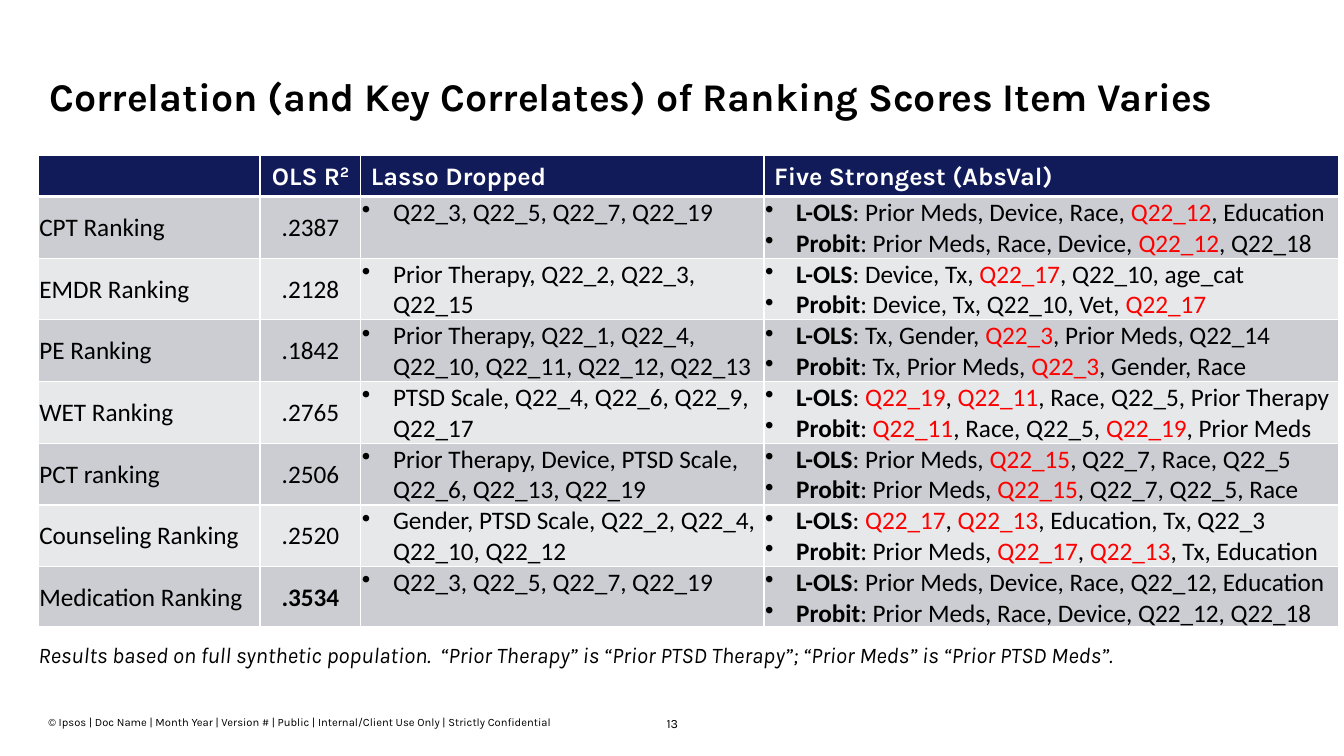
import pptx
import pptx.dml.color
import pptx.enum.text
import pptx.oxml
import pptx.oxml.ns
import pptx.util

BLACK = pptx.dml.color.RGBColor(0x00, 0x00, 0x00)
WHITE = pptx.dml.color.RGBColor(0xFF, 0xFF, 0xFF)
RED = pptx.dml.color.RGBColor(0xFF, 0x00, 0x00)
NAVY = pptx.dml.color.RGBColor(0x12, 0x1B, 0x5A)
BANDS = (pptx.dml.color.RGBColor(0xCC, 0xCD, 0xD2),
         pptx.dml.color.RGBColor(0xE7, 0xE8, 0xEA))

SLIDE_WIDTH = pptx.util.Inches(13.33)
SLIDE_HEIGHT = pptx.util.Inches(7.5)
Pt = pptx.util.Pt
ALIGN = pptx.enum.text.PP_ALIGN
ANCHOR = pptx.enum.text.MSO_ANCHOR
GROW = pptx.enum.text.MSO_AUTO_SIZE.SHAPE_TO_FIT_TEXT

# Shares of the slide's size, in percent
TABLE_LEFT, TABLE_TOP = 2.85, 20.53
COLUMN_SHARES = (16.5, 7.5, 30, 42.75)
HEADER_SHARE, RANKING_SHARE = 5.47, 8.16

HEADER_FONT = {"name": "Karla", "size": Pt(18), "bold": True}
BODY_FONT = {"name": "Calibri", "size": Pt(18), "bold": False}
NO_MARGINS = {"margin_left": 0, "margin_top": 0, "margin_right": 0, "margin_bottom": 0}
TIGHT_MARGINS = {side: pptx.util.Inches(0.01)
                 for side in ("margin_left", "margin_top", "margin_right")}
TIGHT_MARGINS["margin_bottom"] = 0

HEADINGS = ("", "OLS R", "Lasso Dropped", "Five Strongest (AbsVal)")

# Ranking, R squared, dropped by lasso, then L-OLS and Probit (*red*)
RANKINGS = (
    ("CPT Ranking", ".2387", "Q22_3, Q22_5, Q22_7, Q22_19",
     "Prior Meds, Device, Race, *Q22_12*, Education",
     "Prior Meds, Race, Device, *Q22_12*, Q22_18"),
    ("EMDR Ranking", ".2128", "Prior Therapy, Q22_2, Q22_3, Q22_15",
     "Device, Tx, *Q22_17*, Q22_10, age_cat",
     "Device, Tx, Q22_10, Vet, *Q22_17*"),
    ("PE Ranking", ".1842", "Prior Therapy, Q22_1, Q22_4, Q22_10, Q22_11, Q22_12, Q22_13",
     "Tx, Gender, *Q22_3*, Prior Meds, Q22_14",
     "Tx, Prior Meds, *Q22_3*, Gender, Race"),
    ("WET Ranking", ".2765", "PTSD Scale, Q22_4, Q22_6, Q22_9, Q22_17",
     "*Q22_19*, *Q22_11*, Race, Q22_5, Prior Therapy",
     "*Q22_11*, Race, Q22_5, *Q22_19*, Prior Meds"),
    ("PCT ranking", ".2506", "Prior Therapy, Device, PTSD Scale, Q22_6, Q22_13, Q22_19",
     "Prior Meds, *Q22_15*, Q22_7, Race, Q22_5",
     "Prior Meds, *Q22_15*, Q22_7, Q22_5, Race"),
    ("Counseling Ranking", ".2520", "Gender, PTSD Scale, Q22_2, Q22_4, Q22_10, Q22_12",
     "*Q22_17*, *Q22_13*, Education, Tx, Q22_3",
     "Prior Meds, *Q22_17*, *Q22_13*, Tx, Education"),
    ("Medication Ranking", ".3534", "Q22_3, Q22_5, Q22_7, Q22_19",
     "Prior Meds, Device, Race, Q22_12, Education",
     "Prior Meds, Race, Device, Q22_12, Q22_18"),
)
STRONGEST_R2 = ".3534"


def across(percent):
    return round(SLIDE_WIDTH * percent / 100)


def down(percent):
    return round(SLIDE_HEIGHT * percent / 100)


def apply_format(target, values):
    for attribute, value in values.items():
        setattr(target, attribute, value)


def add_run(paragraph, text, font, color=BLACK):
    run = paragraph.add_run()
    run.text = text
    apply_format(run.font, font)
    run.font.color.rgb = color
    return run


def add_text(slide, place, text, font, frame_format, paragraph_format):
    """Place is left, top, width and height in percent of the slide."""
    left, top, width, height = place
    frame = slide.shapes.add_textbox(
        across(left), down(top), across(width), down(height)).text_frame
    apply_format(frame, {"word_wrap": True, **NO_MARGINS, **frame_format})
    paragraph = frame.paragraphs[0]
    apply_format(paragraph, paragraph_format)
    add_run(paragraph, text, {"name": "Karla", **font})


def add_bullet(paragraph):
    properties = paragraph._p.get_or_add_pPr()
    indent = pptx.util.Inches(0.31)
    properties.set("marL", str(indent))
    properties.set("indent", str(-indent))
    properties.append(pptx.oxml.parse_xml(
        f'<a:buChar {pptx.oxml.ns.nsdecls("a")} char="•"/>'))


def paint_cell(cell, fill, top=1, bottom=1):
    """Fill the cell and give it white borders, widths in points."""
    cell.fill.solid()
    cell.fill.fore_color.rgb = fill
    borders = {"lnL": 1, "lnR": 1, "lnT": top, "lnB": bottom}
    for order, (side, width) in enumerate(borders.items()):
        cell._tc.get_or_add_tcPr().insert(order, pptx.oxml.parse_xml(
            f'<a:{side} {pptx.oxml.ns.nsdecls("a")} w="{Pt(width)}">'
            f'<a:solidFill><a:srgbClr val="{WHITE}"/></a:solidFill></a:{side}>'))


def fill_header(cells):
    for cell, heading in zip(cells, HEADINGS):
        paint_cell(cell, NAVY, bottom=3)
        cell.vertical_anchor = ANCHOR.BOTTOM
        if heading:
            add_run(cell.text_frame.paragraphs[0], heading, HEADER_FONT, WHITE)
    r_squared = cells[1].text_frame.paragraphs[0]
    r_squared.alignment = ALIGN.CENTER
    exponent = add_run(r_squared, "2", HEADER_FONT, WHITE)
    exponent._r.get_or_add_rPr().set("baseline", "30000")


def add_correlates(paragraph, model, correlates):
    add_bullet(paragraph)
    add_run(paragraph, model, {**BODY_FONT, "bold": True})
    for position, part in enumerate(f": {correlates}".split("*")):
        if part:
            add_run(paragraph, part, BODY_FONT, RED if position % 2 else BLACK)


def fill_ranking(cells, ranking, fill, top, bottom):
    name, r_squared, dropped, ols, probit = ranking
    for cell in cells:
        paint_cell(cell, fill, top, bottom)
        apply_format(cell, {"vertical_anchor": ANCHOR.MIDDLE, **TIGHT_MARGINS})
    cells[2].vertical_anchor = ANCHOR.TOP
    name_line, r2_line, dropped_line, ols_line = (
        cell.text_frame.paragraphs[0] for cell in cells)
    add_run(name_line, name, BODY_FONT)
    r2_line.alignment = ALIGN.CENTER
    add_run(r2_line, r_squared, {**BODY_FONT, "bold": r_squared == STRONGEST_R2})
    add_bullet(dropped_line)
    add_run(dropped_line, dropped, BODY_FONT)
    add_correlates(ols_line, "L-OLS", ols)
    add_correlates(cells[3].text_frame.add_paragraph(), "Probit", probit)


def add_rankings_table(slide):
    count = len(RANKINGS)
    table = slide.shapes.add_table(
        count + 1, len(COLUMN_SHARES), across(TABLE_LEFT), down(TABLE_TOP),
        across(sum(COLUMN_SHARES)), down(HEADER_SHARE + count * RANKING_SHARE)).table
    for column, share in zip(table.columns, COLUMN_SHARES):
        column.width = across(share)
    header, *ranking_rows = table.rows
    header.height = down(HEADER_SHARE)
    fill_header(list(header.cells))
    for index, (row, ranking) in enumerate(zip(ranking_rows, RANKINGS)):
        row.height = down(RANKING_SHARE)
        fill_ranking(list(row.cells), ranking, BANDS[index % 2],
                     top=3 if index == 0 else 1,
                     bottom=3 if index == count - 1 else 1)


def main():
    presentation = pptx.Presentation()
    apply_format(presentation, {"slide_width": SLIDE_WIDTH, "slide_height": SLIDE_HEIGHT})
    slide = presentation.slides.add_slide(presentation.slide_layouts[6])
    add_text(slide, (3.6, 94.67, 38.33, 1.73),
             "© Ipsos | Doc Name | Month Year | Version # | Public | "
             "Internal/Client Use Only | Strictly Confidential",
             {"size": Pt(8)}, {"vertical_anchor": ANCHOR.BOTTOM, "auto_size": GROW}, {})
    add_text(slide, (48, 94.53, 4.05, 2), "13", {"size": Pt(9)}, {"auto_size": GROW},
             {"alignment": ALIGN.CENTER, "line_spacing": 1.1, "space_after": Pt(4)})
    add_rankings_table(slide)
    add_text(slide, (TABLE_LEFT, 84.27, 90.55, 3.73),
             "Results based on full synthetic population.  “Prior Therapy” is "
             "“Prior PTSD Therapy”; “Prior Meds” is “Prior PTSD Meds”.",
             {"size": Pt(16), "italic": True}, {"auto_size": GROW},
             {"line_spacing": 1.15, "space_after": Pt(4)})
    add_text(slide, (3.68, 10.27, 92.72, 6.93),
             "Correlation (and Key Correlates) of Ranking Scores Item Varies",
             {"size": Pt(28), "bold": True}, {}, {"line_spacing": 0.9})
    presentation.save("out.pptx")


if __name__ == "__main__":
    main()
